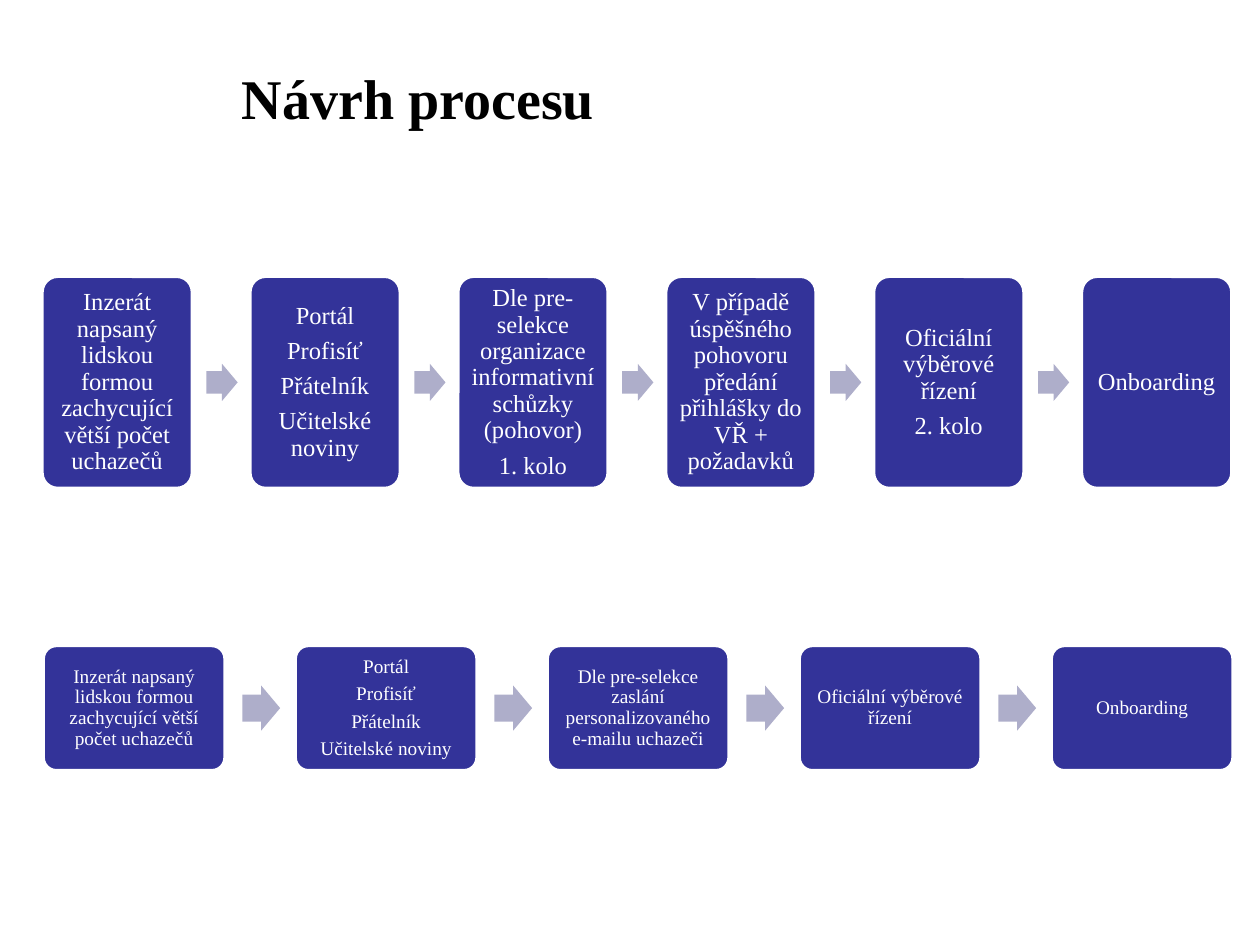
from pptx import Presentation
from pptx.dml.color import RGBColor
from pptx.enum.shapes import MSO_SHAPE
from pptx.enum.text import MSO_ANCHOR, MSO_AUTO_SIZE, PP_ALIGN
from pptx.util import Inches, Pt

ROUNDED = MSO_SHAPE.ROUNDED_RECTANGLE
ARROW = MSO_SHAPE.RIGHT_ARROW
MIDDLE, BOTTOM = MSO_ANCHOR.MIDDLE, MSO_ANCHOR.BOTTOM
CENTER, LEFT = PP_ALIGN.CENTER, PP_ALIGN.LEFT
NO_FIT = MSO_AUTO_SIZE.NONE

FONT = "Times New Roman"
COLORS = {"title": "000000", "step": "333399", "arrow": "AEAECA", "light": "FFFFFF"}

ADVERT = ["Inzerát napsaný lidskou formou zachycující větší počet uchazečů"]
CHANNELS = ["Portál", "Profisíť", "Přátelník", "Učitelské noviny"]
FULL_PROCESS = [
    ADVERT,
    CHANNELS,
    ["Dle pre-selekce organizace informativní schůzky (pohovor)", "1. kolo"],
    ["V případě úspěšného pohovoru předání přihlášky do VŘ + požadavků"],
    ["Oficiální výběrové řízení", "2. kolo"],
    ["Onboarding"],
]
SHORT_PROCESS = [
    ADVERT,
    CHANNELS,
    ["Dle pre-selekce zaslání personalizovaného e-mailu uchazeči"],
    ["Oficiální výběrové řízení"],
    ["Onboarding"],
]


def color(name):
    return RGBColor.from_string(COLORS[name])


def set_frame(frame, anchor, inset):
    frame.word_wrap = True
    frame.auto_size = NO_FIT
    frame.vertical_anchor = anchor
    frame.margin_left = frame.margin_right = Inches(inset)
    frame.margin_top = frame.margin_bottom = Inches(inset)


def set_font(para, size, color_name, bold=False):
    para.font.name = FONT
    para.font.size = Pt(size)
    para.font.bold = bold
    para.font.color.rgb = color(color_name)


def add_title(page, text, left, top, width, height):
    title = page.shapes.title
    title.left, title.top = Inches(left), Inches(top)
    title.width, title.height = Inches(width), Inches(height)
    set_frame(title.text_frame, BOTTOM, 0)
    para = title.text_frame.paragraphs[0]
    para.text = text
    para.alignment = LEFT
    set_font(para, 32, "title", bold=True)


def add_filled(page, kind, fill, left, top, width, height):
    shape = page.shapes.add_shape(
        kind, Inches(left), Inches(top), Inches(width), Inches(height))
    shape.shadow.inherit = False
    shape.fill.solid()
    shape.fill.fore_color.rgb = color(fill)
    return shape


def add_step(page, lines, left, top, width, height, size, inset):
    box = add_filled(page, ROUNDED, "step", left, top, width, height)
    box.adjustments[0] = 0.1
    box.line.color.rgb = color("light")
    box.line.width = Pt(1)
    frame = box.text_frame
    set_frame(frame, MIDDLE, inset)
    frame.text = "\n".join(lines)
    for para in frame.paragraphs:
        para.alignment = CENTER
        para.line_spacing = 0.9
        para.space_after = Pt(round(0.35 * size, 2))
        set_font(para, size, "light")


def add_arrow(page, left, middle, width, height):
    arrow = add_filled(page, ARROW, "arrow", left, middle - height / 2, width, height)
    arrow.adjustments[0] = 0.6
    arrow.adjustments[1] = 0.5
    arrow.line.fill.background()


def add_process(page, steps, left, top, width, height, pitch, size, inset):
    """Row of equal steps; arrows are sized from the step width."""
    for index, lines in enumerate(steps):
        step_left = left + index * pitch
        if index:
            add_arrow(page, step_left - pitch + 1.1 * width, top + height / 2,
                      0.21 * width, 0.25 * width)
        add_step(page, lines, step_left, top, width, height, size, inset)


def main():
    deck = Presentation()
    deck.slide_width, deck.slide_height = Inches(10), Inches(7.5)
    page = deck.slides.add_slide(deck.slide_layouts[5])

    add_title(page, "Návrh procesu", 1.92, 0.55, 7.3, 0.49)
    # Process with two rounds
    add_process(page, FULL_PROCESS, 0.34, 2.2, 1.18, 1.67, 1.65, 14, 0.06)
    # Shorter process
    add_process(page, SHORT_PROCESS, 0.35, 5.13, 1.43, 0.98, 2, 11, 0.05)

    deck.save("out.pptx")


if __name__ == "__main__":
    main()
